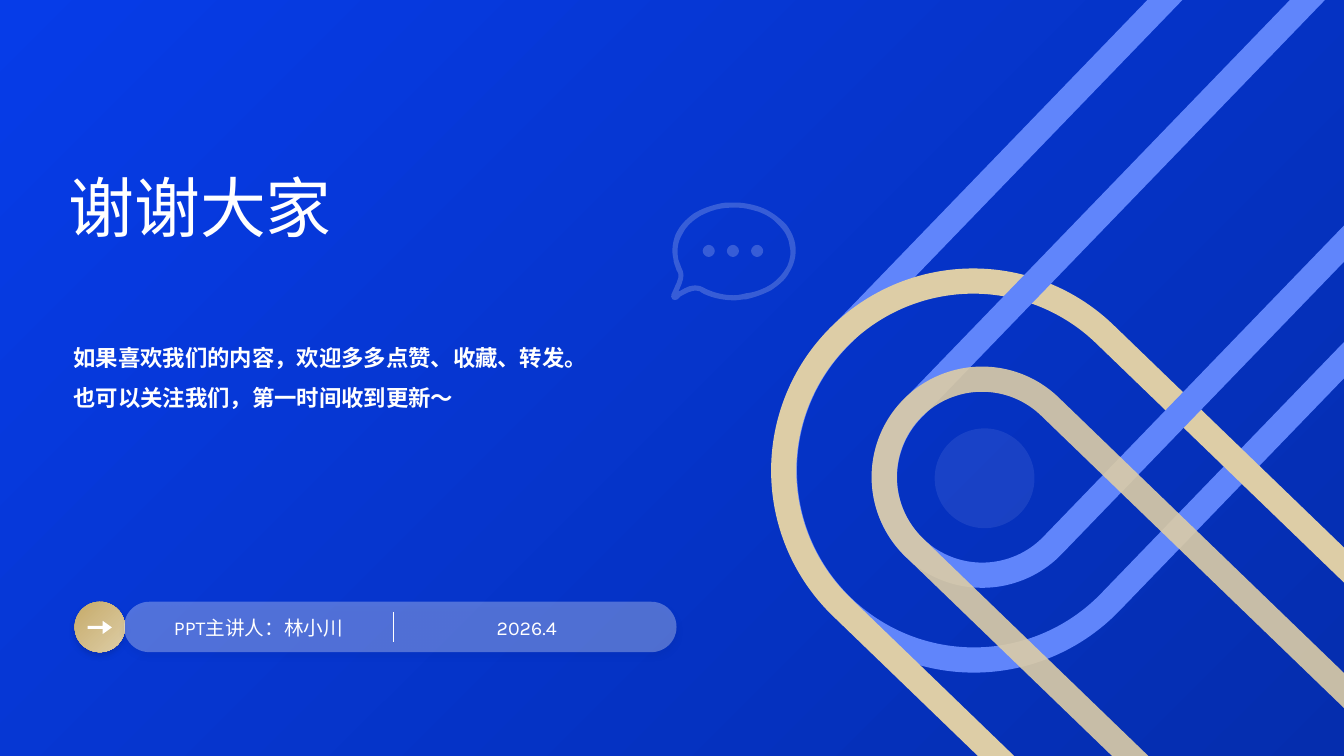
import pptx
import pptx.util
import pptx.dml.color
import pptx.enum.shapes
import pptx.enum.text
import pptx.oxml
import pptx.oxml.ns
from dataclasses import dataclass

PX = 9144  # EMU per px, 100 px to the inch
SHAPE = pptx.enum.shapes.MSO_SHAPE
ALIGN = pptx.enum.text.PP_ALIGN
ANCHOR = pptx.enum.text.MSO_ANCHOR


@dataclass(frozen=True)
class Theme:
    sky: str = "063CE8"
    deep: str = "052DAE"
    blue: str = "6085FB"
    pale: str = "CAD6FE"
    gold: str = "DDCDA6"
    bronze: str = "C6AB6A"
    shade: str = "031E74"
    white: str = "FFFFFF"
    latin: str = "Karla"
    asian: str = "Noto Sans CJK SC"
    title: int = 47
    body: int = 16
    label: int = 14
    band: int = 18


THEME = Theme()

# Content: boxes are (left, top, width, height) in px
SLIDE = (1333, 750)
LABELS = [("PPT主讲人：林小川", (153, 605, 207, 34)), ("2026.4", (419, 605, 207, 34))]
TITLE = ("谢谢大家", (68, 54, 644, 294))
MESSAGE = ("如果喜欢我们的内容，欢迎多多点赞、收藏、转发。也可以关注我们，第一时间收到更新～",
           (73, 328, 514, 122))
# box, rotation, colour, opacity
BANDS = [
    ((979, -219, 376, 955), 224, THEME.blue, 100),
    ((923, 217, 376, 781), 314, THEME.gold, 100),
    ((1054, -61, 194, 703), 224, THEME.blue, 100),
    ((1014, 318, 194, 575), 314, THEME.gold, 90),
]
DISC = (927, 425, 99, 99)
BADGE = (74, 597, 50, 50)
ARROW = (87, 616, 24, 13)
PILL = (123, 597, 548, 50)
DIVIDER = (390, 607, 390, 637)

# Speech bubble: curves as (x1, y1, x2, y2, x, y), each contour ending where it starts
BUBBLE_INNER = [
    (726, 206, 721, 206, 715, 207), (708, 208, 701, 211, 695, 214),
    (687, 219, 681, 224, 677, 232), (672, 240, 671, 249, 673, 258),
    (674, 261, 675, 263, 676, 266), (677, 268, 678, 270, 678, 273),
    (678, 276, 677, 279, 676, 282), (675, 284, 674, 287, 673, 289),
    (674, 289, 674, 289, 674, 289), (677, 287, 681, 285, 684, 284),
    (688, 283, 691, 283, 695, 284), (697, 285, 699, 286, 701, 287),
    (710, 291, 719, 293, 728, 293), (732, 293, 736, 292, 740, 291),
    (749, 290, 757, 287, 765, 282), (772, 277, 777, 271, 781, 264),
    (784, 257, 785, 250, 783, 243), (782, 235, 778, 229, 772, 223),
    (767, 217, 760, 213, 752, 210), (745, 208, 738, 206, 731, 206),
]
BUBBLE_OUTER = [
    (727, 201, 730, 201, 733, 201), (743, 202, 752, 204, 760, 208),
    (768, 212, 774, 217, 780, 223), (785, 230, 788, 236, 789, 244),
    (790, 253, 788, 262, 783, 270), (779, 278, 772, 283, 765, 288),
    (757, 292, 749, 295, 740, 297), (736, 297, 732, 298, 729, 298),
    (718, 298, 708, 296, 699, 292), (697, 291, 695, 290, 694, 289),
    (691, 288, 688, 288, 686, 289), (682, 290, 679, 292, 675, 294),
    (674, 295, 673, 296, 672, 297), (670, 298, 669, 298, 667, 297),
    (666, 295, 665, 294, 666, 292), (668, 288, 669, 285, 671, 281),
    (672, 279, 672, 277, 673, 275), (673, 272, 673, 270, 671, 268),
    (670, 264, 668, 261, 668, 257), (666, 249, 667, 241, 670, 233),
    (674, 224, 680, 218, 688, 212), (696, 207, 705, 204, 714, 202),
    (718, 201, 721, 201, 724, 201),
]
DOT_CENTRES, DOT_RADIUS, DOT_HANDLE = [(727, 249), (703, 249), (751, 249)], 6, 3

prs = pptx.Presentation()
prs.slide_width, prs.slide_height = (side * PX for side in SLIDE)
slide = prs.slides.add_slide(prs.slide_layouts[6])


def emu(lengths):
    return [length * PX for length in lengths]


def rgb(colour):
    return pptx.dml.color.RGBColor.from_string(colour)


def element(tag, attributes="", inside=""):
    return pptx.oxml.parse_xml(
        f'<a:{tag} {pptx.oxml.ns.nsdecls("a")} {attributes}>{inside}</a:{tag}>')


def paint(fill, colour, opacity=100):
    fill.solid()
    fill.fore_color.rgb = rgb(colour)
    if opacity < 100:
        node = fill._xPr.find(".//" + pptx.oxml.ns.qn("a:srgbClr"))
        node.append(element("alpha", f'val="{opacity * 1000}"'))


def paint_gradient(fill, *colours):
    fill.gradient()
    fill.gradient_angle = 315
    for stop, colour, position in zip(fill.gradient_stops, colours, (0, 1)):
        stop.color.rgb = rgb(colour)
        stop.position = position


def plain(shape):
    shape.shadow.inherit = False
    shape.line.fill.background()
    return shape


def add_preset(kind, box):
    return plain(slide.shapes.add_shape(kind, *emu(box)))


def drop_shadow(shape):
    blur, distance = pptx.util.Pt(4), pptx.util.Pt(3)
    shape._element.spPr.find(pptx.oxml.ns.qn("a:effectLst")).append(element(
        "outerShdw", f'blurRad="{blur}" dist="{distance}" dir="5400000" rotWithShape="0"',
        f'<a:srgbClr val="{THEME.shade}"><a:alpha val="25000"/></a:srgbClr>'))


def dot_curves(x, y):
    """Four quarter turns, clockwise from the top."""
    r, h = DOT_RADIUS, DOT_HANDLE
    return [(x + h, y - r, x + r, y - h, x + r, y), (x + r, y + h, x + h, y + r, x, y + r),
            (x - h, y + r, x - r, y + h, x - r, y), (x - r, y - h, x - h, y - r, x, y - r)]


def add_curved(contours):
    """One freeform whose segments are bent into cubic curves."""
    builder = slide.shapes.build_freeform(*contours[0][-1][4:], scale=PX)
    for number, curves in enumerate(contours):
        if number:
            builder.move_to(*curves[-1][4:])
        builder.add_line_segments([curve[4:] for curve in curves])
    shape = plain(builder.convert_to_shape())
    left, top = shape.left // PX, shape.top // PX
    segments = list(shape._element.iter(pptx.oxml.ns.qn("a:lnTo")))
    for segment, curve in zip(segments, sum(contours, [])):
        points = "".join(f'<a:pt x="{x - left}" y="{y - top}"/>'
                         for x, y in zip(curve[::2], curve[1::2]))
        segment.getparent().replace(segment, element("cubicBezTo", inside=points))
    return shape


def write(words, box, size, font=THEME.latin, bold=None, spacing=1.1,
          align=ALIGN.LEFT, anchor=ANCHOR.MIDDLE):
    frame = slide.shapes.add_textbox(*emu(box)).text_frame
    frame.word_wrap = True
    frame.vertical_anchor = anchor
    frame.margin_left = frame.margin_right = frame.margin_top = frame.margin_bottom = 0
    paragraph = frame.paragraphs[0]
    paragraph.alignment, paragraph.line_spacing = align, spacing
    run = paragraph.add_run()
    run.text = words
    run.font.size, run.font.name, run.font.bold = pptx.util.Pt(size), font, bold
    run.font.color.rgb = rgb(THEME.white)
    run.font._element.append(element("ea", f'typeface="{THEME.asian}"'))


# Background
backdrop = add_preset(SHAPE.RECTANGLE, (0, 0, *SLIDE))
paint_gradient(backdrop.fill, THEME.sky, THEME.deep)

# Interlaced bands and the disc inside them
for box, angle, colour, opacity in BANDS:
    band = add_preset(SHAPE.ROUND_2_SAME_RECTANGLE, box)
    band.adjustments[0], band.adjustments[1] = 0.5, 0
    band.rotation = angle
    band.fill.background()
    band.line.width = pptx.util.Pt(THEME.band)
    paint(band.line.fill, colour, opacity)
disc = add_preset(SHAPE.OVAL, DISC)
paint(disc.fill, THEME.pale, 10)

# Presenter bar
badge = add_preset(SHAPE.OVAL, BADGE)
paint_gradient(badge.fill, THEME.bronze, THEME.gold)
drop_shadow(badge)
arrow = add_preset(SHAPE.RIGHT_ARROW, ARROW)
arrow.adjustments[0], arrow.adjustments[1] = 0.24, 0.7
paint(arrow.fill, THEME.white)
pill = add_preset(SHAPE.ROUNDED_RECTANGLE, PILL)
pill.adjustments[0] = 0.5
paint(pill.fill, THEME.white, 30)
drop_shadow(pill)
for words, box in LABELS:
    write(words, box, THEME.label, align=ALIGN.CENTER)
divider = slide.shapes.add_connector(pptx.enum.shapes.MSO_CONNECTOR.STRAIGHT, *emu(DIVIDER))
divider.line.width = pptx.util.Pt(1)
paint(divider.line.fill, THEME.white)
divider._element.spPr.append(element("effectLst"))

# Speech bubble
dots = [dot_curves(x, y) for x, y in DOT_CENTRES]
bubble = add_curved([*dots, BUBBLE_INNER, BUBBLE_OUTER])
paint(bubble.fill, THEME.white, 20)

# Title and message
write(*TITLE, THEME.title)
write(*MESSAGE, THEME.body, THEME.asian, True, 1.5, anchor=ANCHOR.TOP)

prs.save("out.pptx")
